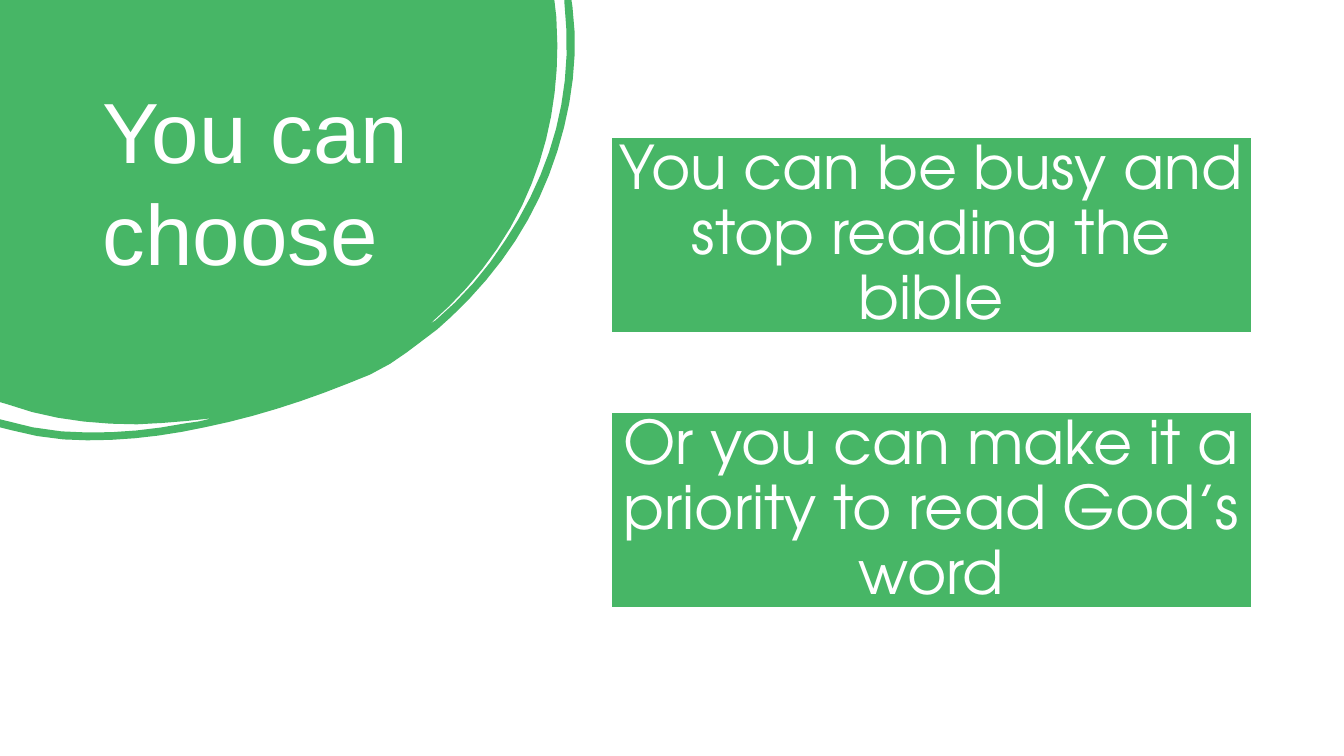
"""Build a slide with a green corner blob, a title and two choices."""
from math import dist

from pptx import Presentation
from pptx.dml.color import RGBColor
from pptx.enum.shapes import MSO_SHAPE as Shape
from pptx.enum.text import MSO_ANCHOR as Anchor, PP_ALIGN as Align
from pptx.util import Cm, Pt

COLORS = {"green": "47B666", "white": "FFFFFF"}
TITLE = "You can choose"
CHOICES = [
    "You can be busy and stop reading the bible",
    "Or you can make it a priority to read God’s word",
]

SLIDE_SIZE = (33.87, 19.05)
TITLE_BOX = (2.34, 1.88, 8.94, 5.64)
CHOICE_LEFT, CHOICE_TOP, CHOICE_PITCH = 15.4, 3.45, 6.94
CHOICE_SIZE = (16.14, 4.93)
INSET = 0.08

UNIT = 2.54
STEPS_PER_UNIT = 4
BLOB_START = (0, 0)
# Two numbers make a straight edge, six a Bézier curve.
BLOB_EDGES = [
    (5.5, 0), (5.52, 0.17),
    (5.53, 0.26, 5.53, 0.36, 5.53, 0.45),
    (5.53, 1.01, 5.42, 1.54, 5.18, 2.04),
    (4.96, 2.49, 4.65, 2.88, 4.27, 3.21),
    (4.29, 3.21, 4.3, 3.19, 4.32, 3.18),
    (4.59, 2.95, 4.82, 2.69, 5.01, 2.39),
    (5.43, 1.76, 5.65, 1.07, 5.62, 0.3),
    (5.62, 0.21, 5.61, 0.12, 5.6, 0.03),
    (5.6, 0), (5.67, 0), (5.68, 0.07),
    (5.74, 0.54, 5.68, 1.02, 5.53, 1.5),
    (5.33, 2.14, 4.97, 2.68, 4.48, 3.14),
    (4.39, 3.23, 4.29, 3.31, 4.19, 3.38),
    (4.09, 3.46, 3.99, 3.53, 3.87, 3.61),
    (3.75, 3.69, 3.6, 3.75, 3.44, 3.81),
    (2.99, 3.99, 2.52, 4.14, 2.03, 4.24),
    (1.57, 4.34, 1.1, 4.39, 0.63, 4.36),
    (0.45, 4.34, 0.28, 4.32, 0.12, 4.27),
    (0, 4.24), (0, 4.16), (0.04, 4.17),
    (0.23, 4.23, 0.42, 4.26, 0.61, 4.28),
    (1.03, 4.31, 1.43, 4.28, 1.84, 4.2),
    (1.89, 4.2, 1.93, 4.19, 1.98, 4.18),
    (2.02, 4.17, 2.06, 4.16, 2.1, 4.15),
    (1.86, 4.18, 1.61, 4.2, 1.36, 4.21),
    (0.92, 4.21, 0.48, 4.16, 0.07, 4.01),
    (0, 3.99),
]


def color(name):
    """Return the named colour."""
    return RGBColor.from_string(COLORS[name])


def trace(start, edges):
    """Return the points along straight and curved edges."""
    points = [start]
    for edge in edges:
        if len(edge) == 2:
            points.append(edge)
            continue
        x0, y0 = points[-1]
        x1, y1, x2, y2, x3, y3 = edge
        steps = max(1, round(STEPS_PER_UNIT * dist((x0, y0), (x3, y3))))
        for step in range(1, steps + 1):
            t = step / steps
            a, b, c, d = (1 - t) ** 3, 3 * t * (1 - t) ** 2, 3 * t * t * (1 - t), t ** 3
            points.append((a * x0 + b * x1 + c * x2 + d * x3,
                           a * y0 + b * y1 + c * y2 + d * y3))
    return [(Cm(x * UNIT), Cm(y * UNIT)) for x, y in points]


def paint(shape, fill, line=None):
    """Give a shape a flat fill and an optional thin line."""
    shape.shadow.inherit = False
    shape.fill.solid()
    shape.fill.fore_color.rgb = color(fill)
    if line:
        shape.line.color.rgb = color(line)
        shape.line.width = Pt(1)
    else:
        shape.line.fill.background()


def write(shape, text, font, size, align, anchor, spacing):
    """Write white, wrapped text and return its frame."""
    frame = shape.text_frame
    frame.text = text
    frame.word_wrap = True
    frame.vertical_anchor = anchor
    frame.margin_top = frame.margin_bottom = Cm(INSET)
    paragraph = frame.paragraphs[0]
    paragraph.alignment = align
    paragraph.line_spacing = spacing
    run = paragraph.runs[0]
    run.font.name = font
    run.font.size = Pt(size)
    run.font.color.rgb = color("white")
    return frame


def main():
    """Draw the slide and save it."""
    deck = Presentation()
    deck.slide_width, deck.slide_height = map(Cm, SLIDE_SIZE)
    shapes = deck.slides.add_slide(deck.slide_layouts[6]).shapes

    backdrop = shapes.add_shape(Shape.RECTANGLE, 0, 0, *map(Cm, SLIDE_SIZE))
    paint(backdrop, "white")

    first, *rest = trace(BLOB_START, BLOB_EDGES)
    builder = shapes.build_freeform(*first)
    builder.add_line_segments(rest, close=True)
    paint(builder.convert_to_shape(), "green")

    title = shapes.add_textbox(*map(Cm, TITLE_BOX))
    write(title, TITLE, "Arial", 61, Align.LEFT, Anchor.TOP, 1.0)

    for index, choice in enumerate(CHOICES):
        top = CHOICE_TOP + index * CHOICE_PITCH
        panel = shapes.add_shape(Shape.RECTANGLE, Cm(CHOICE_LEFT), Cm(top),
                                 *map(Cm, CHOICE_SIZE))
        paint(panel, "green", "white")
        frame = write(panel, choice, "TeX Gyre Adventor", 43,
                      Align.CENTER, Anchor.MIDDLE, 0.9)
        frame.margin_left = frame.margin_right = Cm(INSET)

    deck.save("out.pptx")


if __name__ == "__main__":
    main()
